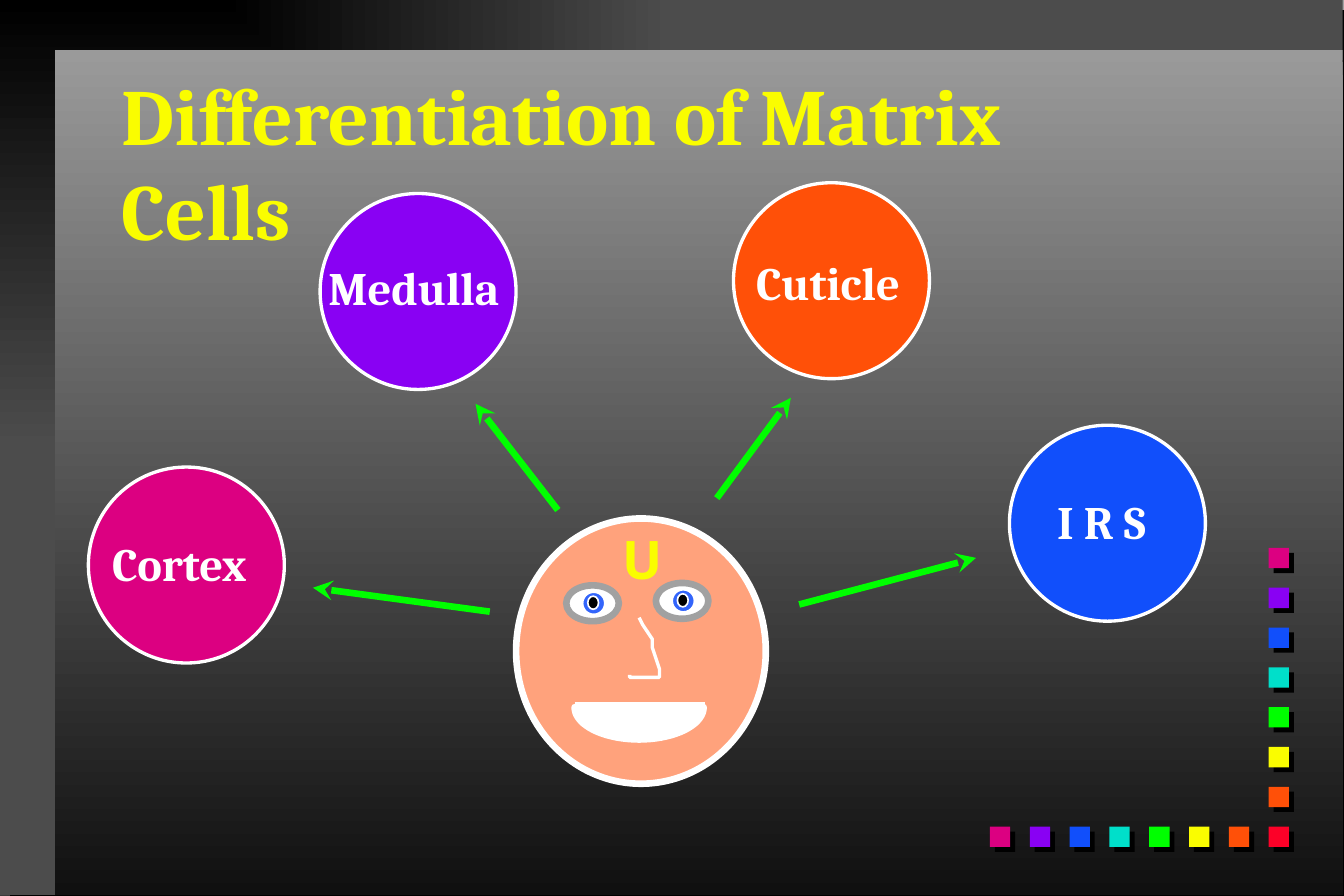
from dataclasses import dataclass
from math import cos, pi, sin

from lxml.etree import SubElement
from pptx import Presentation
from pptx.dml.color import RGBColor
from pptx.enum.shapes import MSO_CONNECTOR, MSO_SHAPE
from pptx.enum.text import MSO_ANCHOR, MSO_AUTO_SIZE, PP_ALIGN
from pptx.oxml.ns import qn
from pptx.util import Inches, Pt

WHITE, YELLOW, GREEN, GREY = "FFFFFF", "FAFD00", "00FF00", "A1A1A1"
MAGENTA, VIOLET, BLUE, ORANGE = "DC0081", "8901F3", "114FFB", "FF5008"
SQUARE_COLOURS = [MAGENTA, VIOLET, BLUE, "00DFCA", GREEN, YELLOW, ORANGE]
CELL_SIZE = 1.64


@dataclass
class CellType:
    name: str
    colour: str
    left: float
    top: float
    label_box: tuple[float, float, float, float]
    arrow: tuple[float, float, float, float]


@dataclass
class EyePart:
    box: tuple[float, float, float, float]
    fill: str
    line: str
    weight: float


CELL_TYPES = [
    CellType("Cortex", MAGENTA, 0.74, 3.91, (0.84, 4.43, 1.37, 0.57), (4.1, 5.12, 2.62, 4.92)),
    CellType("Medulla", VIOLET, 2.68, 1.62, (2.65, 2.12, 1.71, 0.57), (4.67, 4.27, 3.98, 3.38)),
    CellType("Cuticle", ORANGE, 6.14, 1.53, (6.23, 2.08, 1.48, 0.57), (6, 4.17, 6.62, 3.33)),
    CellType("I R S", BLUE, 8.45, 3.56, (8.75, 4.08, 1.07, 0.57), (6.69, 5.06, 8.17, 4.67)),
]
EYE_PARTS = [
    EyePart((4.74, 4.9, 0.44, 0.3), WHITE, GREY, 4),
    EyePart((4.87, 4.95, 0.2, 0.2), "3365FB", WHITE, 2),
    EyePart((4.92, 4.99, 0.09, 0.11), "000000", WHITE, 1),
]
NOSE = [(5.35, 5.17), (5.38, 5.23), (5.42, 5.29), (5.46, 5.35), (5.46, 5.42), (5.48, 5.48),
        (5.5, 5.54), (5.52, 5.6), (5.52, 5.67), (5.27, 5.67), (5.27, 5.65)]


def rgb(colour: str) -> RGBColor:
    return RGBColor.from_string(colour)


def set_line(shape, colour: str, weight: float) -> None:
    shape.line.color.rgb = rgb(colour)
    shape.line.width = Pt(weight)


def set_gradient(fill, first: str, last: str) -> None:
    fill.gradient()
    fill.gradient_angle = 270
    for stop, colour in zip(fill.gradient_stops, (first, last)):
        stop.color.rgb = rgb(colour)


def add_plain(kind: MSO_SHAPE, box: tuple, fill: str, line: str = "", weight: float = 0):
    shape = slide.shapes.add_shape(kind, *map(Inches, box))
    shape.shadow.inherit = False
    shape.fill.solid()
    shape.fill.fore_color.rgb = rgb(fill)
    if line:
        set_line(shape, line, weight)
    else:
        shape.line.fill.background()
    return shape


def cast_shadow(shape, distance: float) -> None:
    effects = shape._element.spPr.find(qn("a:effectLst"))
    shadow = SubElement(effects, qn("a:outerShdw"), dist=str(Pt(distance)), dir="2700000",
                        algn="ctr", rotWithShape="0")
    SubElement(shadow, qn("a:srgbClr"), val="000000")


def format_text(frame, text: str, size: float, font: str, colour: str) -> None:
    frame.text = text
    frame.word_wrap = True
    frame.auto_size = MSO_AUTO_SIZE.NONE
    frame.vertical_anchor = MSO_ANCHOR.TOP
    paragraph = frame.paragraphs[0]
    paragraph.alignment = PP_ALIGN.LEFT
    run_font = paragraph.runs[0].font
    run_font.size, run_font.name, run_font.bold = Pt(size), font, True
    run_font.color.rgb = rgb(colour)


def add_label(box: tuple, text: str, size: float, font: str, colour: str) -> None:
    label = slide.shapes.add_textbox(*map(Inches, box))
    format_text(label.text_frame, text, size, font, colour)


def add_line(ends: tuple, colour: str, arrow: bool = False) -> None:
    line = slide.shapes.add_connector(MSO_CONNECTOR.STRAIGHT, *map(Inches, ends))
    set_line(line, colour, 4)
    if arrow:
        SubElement(line.line._get_or_add_ln(), qn("a:tailEnd"), type="stealth")
    SubElement(line._element.spPr, qn("a:effectLst"))


def add_outline(points: list, weight: float, closed: bool):
    start, *rest = [(Inches(x), Inches(y)) for x, y in points]
    builder = slide.shapes.build_freeform(*start)
    builder.add_line_segments(rest, close=closed)
    outline = builder.convert_to_shape()
    outline.shadow.inherit = False
    set_line(outline, WHITE, weight)
    if closed:
        outline.fill.solid()
        outline.fill.fore_color.rgb = rgb(WHITE)
    else:
        outline.fill.background()
    return outline


def add_backdrop() -> None:
    set_gradient(slide.background.fill, GREY, "3B3B3B")
    border = add_plain(MSO_SHAPE.RECTANGLE, (0, 0, 11.24, 7.49), "000000")
    set_gradient(border.fill, "000000", "4C4C4C")
    # Border shade spreads from the top left corner
    gradient = border._element.spPr.find(qn("a:gradFill"))
    gradient.remove(gradient.find(qn("a:lin")))
    spread = SubElement(gradient, qn("a:path"), {"path": "rect"})
    SubElement(spread, qn("a:fillToRect"), r="100000", b="100000")
    panel = add_plain(MSO_SHAPE.RECTANGLE, (0.46, 0.42, 10.78, 7.07), GREY)
    set_gradient(panel.fill, "9A9A9A", "101010")
    for layer in (border, panel):
        cast_shadow(layer, 8.5)


def add_squares() -> None:
    corner_x, corner_y, step = 10.62, 6.92, 1 / 3
    spots = [(corner_x, corner_y, "FC0128")]
    for index, colour in enumerate(reversed(SQUARE_COLOURS), start=1):
        spots.append((corner_x - index * step, corner_y, colour))
        spots.append((corner_x, corner_y - index * step, colour))
    for x, y, colour in spots:
        cast_shadow(add_plain(MSO_SHAPE.RECTANGLE, (x, y, 0.17, 0.17), colour), 4.2)


def add_face() -> None:
    add_plain(MSO_SHAPE.OVAL, (4.32, 4.34, 2.09, 2.22), "FFA27C", WHITE, 4)
    add_label((5.11, 4.36, 0.52, 0.63), "U", 32, "Noto Sans", YELLOW)
    # Mouth: lower half of an ellipse under a straight lip
    steps = 36
    angles = [pi * index / steps for index in range(steps + 1)]
    add_outline([(5.35 + 0.54 * cos(a), 5.92 + 0.27 * sin(a)) for a in angles], 4, True)
    add_line((4.81, 5.9, 5.9, 5.9), WHITE)
    add_outline(NOSE, 2, False)
    for shift_x, shift_y in ((0, 0), (0.75, -0.02)):
        for part in EYE_PARTS:
            x, y, width, height = part.box
            add_plain(MSO_SHAPE.OVAL, (x + shift_x, y + shift_y, width, height),
                      part.fill, part.line, part.weight)


def add_cell_types() -> None:
    for cell in CELL_TYPES:
        add_plain(MSO_SHAPE.OVAL, (cell.left, cell.top, CELL_SIZE, CELL_SIZE),
                  cell.colour, WHITE, 2)
        add_label(cell.label_box, cell.name, 28, "Cambria", WHITE)
    for cell in CELL_TYPES:
        add_line(cell.arrow, GREEN, arrow=True)


def place_title() -> None:
    title = slide.shapes.title
    title.left, title.top, title.width, title.height = map(Inches, (0.92, 0.5, 8.88, 0.9))
    format_text(title.text_frame, "Differentiation of Matrix Cells", 48, "Cambria", YELLOW)
    # The title lies in front of the panel
    slide.shapes._spTree.append(title._element)


presentation = Presentation()
presentation.slide_width, presentation.slide_height = Inches(11.25), Inches(7.5)
slide = presentation.slides.add_slide(presentation.slide_layouts[5])
add_backdrop()
add_squares()
add_face()
add_cell_types()
place_title()
presentation.save("out.pptx")
